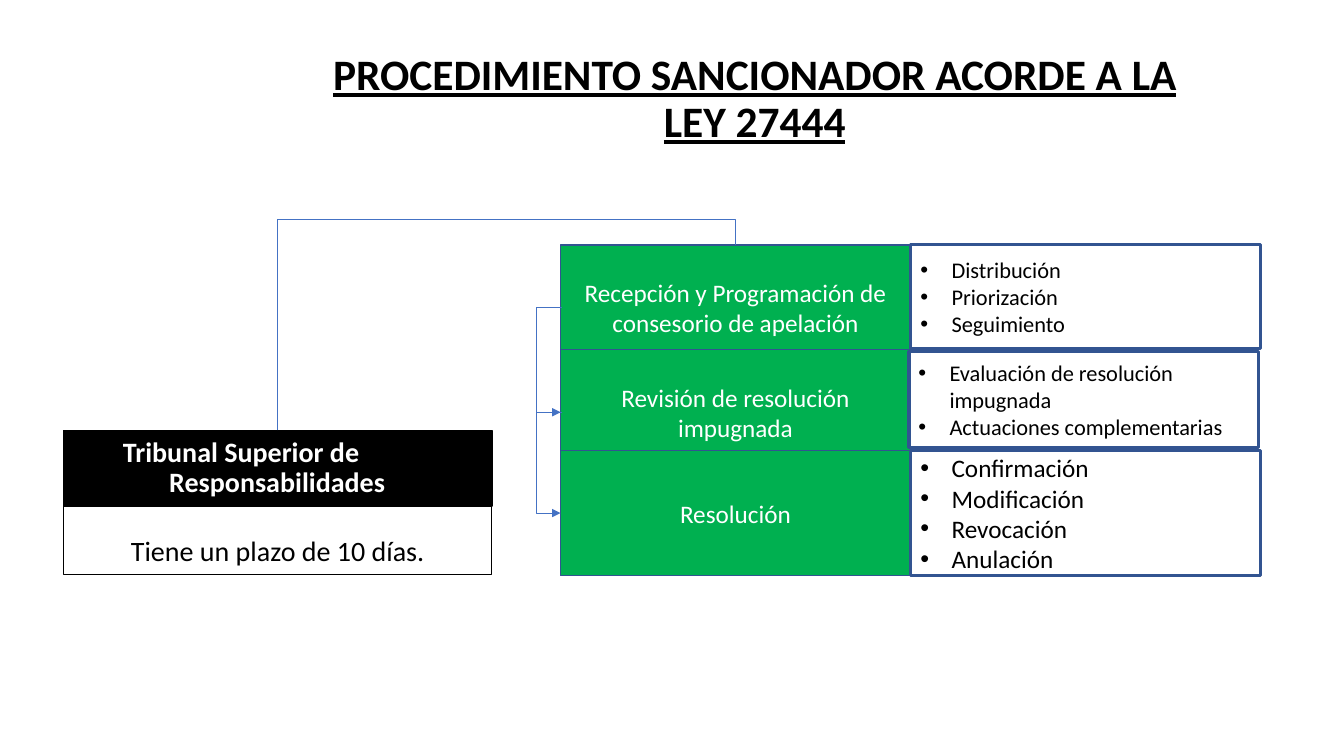
from dataclasses import dataclass
from lxml.etree import SubElement
from pptx import Presentation
from pptx.dml.color import RGBColor
from pptx.enum.shapes import MSO_CONNECTOR, MSO_SHAPE
from pptx.enum.text import MSO_ANCHOR, MSO_AUTO_SIZE, PP_ALIGN
from pptx.oxml.ns import qn
from pptx.util import Inches, Pt

TITLE = "PROCEDIMIENTO SANCIONADOR ACORDE A LA LEY 27444"
COURT = "Tribunal Superior de Responsabilidades"
TERM = "Tiene un plazo de 10 días."
STEPS = [
    ("Recepción y Programación de consesorio de apelación",
     ["Distribución", "Priorización", "Seguimiento"], 16),
    ("Revisión de resolución impugnada",
     ["Evaluación de resolución impugnada", "Actuaciones complementarias"], 16),
    ("Resolución",
     ["Confirmación", "Modificación", "Revocación", "Anulación"], 18),
]


@dataclass(frozen=True)
class Theme:
    font: str = "Calibri"
    black: str = "000000"
    white: str = "FFFFFF"
    green: str = "00B050"
    navy: str = "325491"
    blue: str = "4472C4"
    title: int = 31
    court: int = 20
    step: int = 18


LOOK = Theme()
WIDE, HIGH = 13.33, 7.5
COURT_X, COURT_W = 0.63, 4.25
COURT_Y, TERM_Y, TERM_H = 4.27, 5.02, 0.68
STEP_X, STEP_W, STEP_H = 5.56, 3.47, 1.24
ROWS = [2.43, 3.47, 4.47]
LIST_X = STEP_X + STEP_W
LISTS = [(LIST_X, ROWS[0], 1.03), (LIST_X - 0.02, ROWS[1] + 0.02, 0.95),
         (LIST_X, ROWS[2], STEP_H)]
REACH, THIN = 0.25, 0.01


def paint(color, hue):
    color.rgb = RGBColor.from_string(hue)


def write(frame, lines, size, hue, bold=False, align=PP_ALIGN.CENTER):
    frame.word_wrap = True
    frame.auto_size = MSO_AUTO_SIZE.NONE
    frame.vertical_anchor = MSO_ANCHOR.MIDDLE
    frame.text = "\n".join(lines)
    for para in frame.paragraphs:
        para.alignment = align
        for run in para.runs:
            run.font.name = LOOK.font
            run.font.size = Pt(size)
            run.font.bold = bold
            paint(run.font.color, hue)


def box(slide, area, fill, edge, weight):
    shape = slide.shapes.add_shape(MSO_SHAPE.RECTANGLE, *map(Inches, area))
    shape.shadow.inherit = False
    if fill:
        shape.fill.solid()
        paint(shape.fill.fore_color, fill)
    else:
        shape.fill.background()
    paint(shape.line.color, edge)
    shape.line.width = Pt(weight)
    return shape.text_frame


def indent(para, left, first):
    props = para._p.get_or_add_pPr()
    props.set("marL", str(Inches(left)))
    props.set("indent", str(Inches(first)))
    return props


def elbow(slide, start, end, bend, arrow=False, turn=0):
    link = slide.shapes.add_connector(
        MSO_CONNECTOR.ELBOW, *map(Inches, (*start, *end)))
    paint(link.line.color, LOOK.blue)
    link.line.width = Pt(0.5)
    props = link._element.spPr
    guides = props.find(qn("a:prstGeom")).get_or_add_avLst()
    SubElement(guides, qn("a:gd"), name="adj1", fmla=f"val {round(bend * 100000)}")
    if turn:
        props.find(qn("a:xfrm")).set("rot", str(turn * 60000))
    if arrow:
        SubElement(link.line._get_or_add_ln(), qn("a:tailEnd"), type="triangle")
    SubElement(props, qn("a:effectLst"))


def add_title(slide):
    title = slide.shapes.title
    title.left, title.top, title.width, title.height = map(
        Inches, (3.05, 0.19, 8.87, 1.6))
    write(title.text_frame, [TITLE], LOOK.title, LOOK.black, True)
    para = title.text_frame.paragraphs[0]
    para.line_spacing = 0.9
    para.space_after = Pt(6)
    para.runs[0].font.underline = True


def add_court(slide):
    head = box(slide, (COURT_X, COURT_Y, COURT_W, TERM_Y - COURT_Y),
               LOOK.black, LOOK.black, 1)
    write(head, [COURT], LOOK.court, LOOK.white, True, PP_ALIGN.LEFT)
    head.paragraphs[0].line_spacing = 0.92
    indent(head.paragraphs[0], 0.95, -0.46)
    term = box(slide, (COURT_X, TERM_Y, COURT_W, TERM_H), None, LOOK.black, 0.75)
    write(term, [TERM], LOOK.court, LOOK.black)
    term.vertical_anchor = MSO_ANCHOR.BOTTOM
    term.margin_bottom = Inches(0.07)
    term.paragraphs[0].line_spacing = Pt(15.4)


def add_steps(slide):
    for (name, items, size), top, (left, y, high) in zip(STEPS, ROWS, LISTS):
        step = box(slide, (STEP_X, top, STEP_W, STEP_H), LOOK.green, LOOK.navy, 1)
        write(step, [name], LOOK.step, LOOK.white)
        tasks = box(slide, (left, y, STEP_W, high), None, LOOK.navy, 2)
        write(tasks, items, size, LOOK.black, align=PP_ALIGN.LEFT)
        for para in tasks.paragraphs:
            props = indent(para, 0.31, -0.31)
            SubElement(props, qn("a:buFont"), typeface="Arial")
            SubElement(props, qn("a:buChar"), char="•")


def add_links(slide):
    mids = [top + STEP_H / 2 for top in ROWS]
    for start, end in zip(mids, mids[1:]):
        elbow(slide, (STEP_X + THIN, start), (STEP_X, end), REACH / THIN, True)
    x1, y1 = COURT_X + COURT_W / 2, COURT_Y
    x2, y2 = STEP_X + STEP_W / 2, ROWS[0]
    cx, cy = (x1 + x2) / 2, (y1 + y2) / 2
    dx, dy = (y1 - y2) / 2, (x2 - x1) / 2
    elbow(slide, (cx + dx, cy + dy), (cx - dx, cy - dy),
          1 + REACH / (y1 - y2), turn=90)


def main():
    deck = Presentation()
    deck.slide_width, deck.slide_height = Inches(WIDE), Inches(HIGH)
    slide = deck.slides.add_slide(deck.slide_layouts[5])
    for add in (add_title, add_court, add_steps, add_links):
        add(slide)
    deck.save("out.pptx")


if __name__ == "__main__":
    main()
